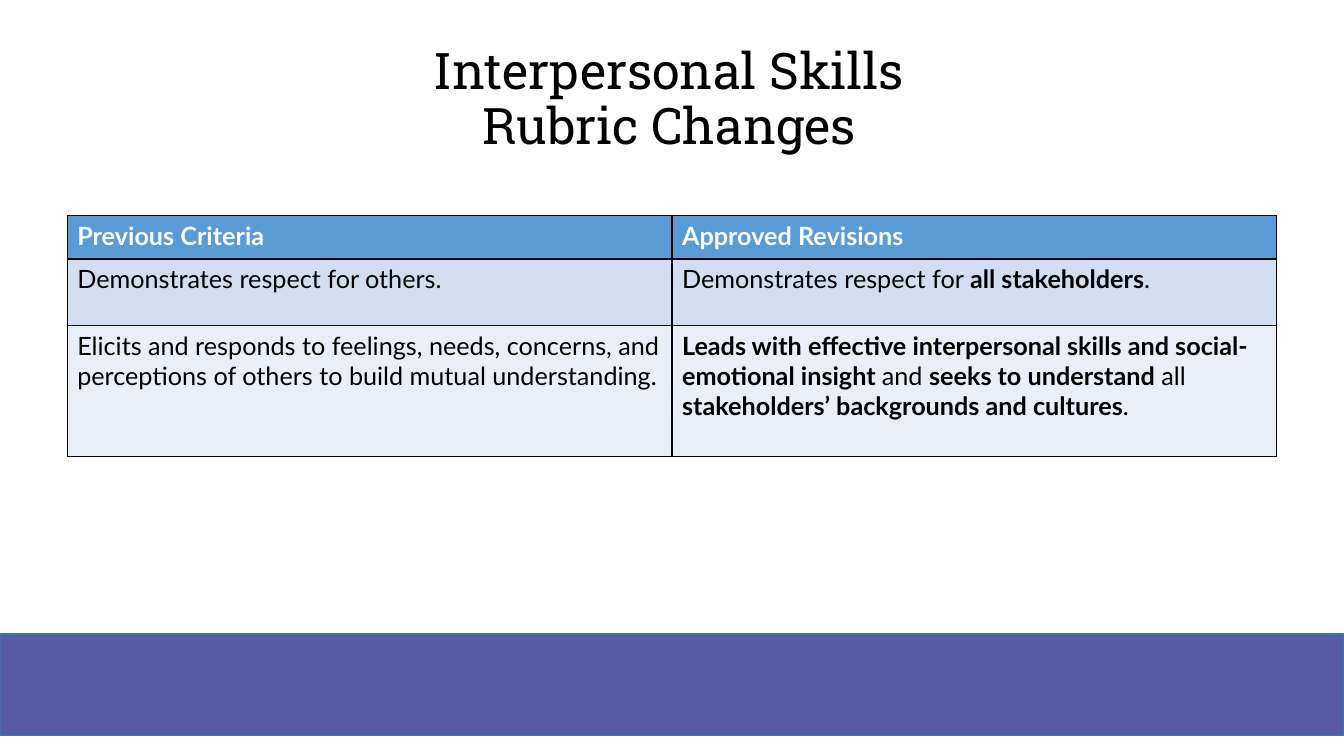
from lxml.etree import SubElement as Sub
from pptx import Presentation as Deck
from pptx.dml.color import RGBColor as Rgb
from pptx.enum.shapes import MSO_SHAPE as Form
from pptx.enum.text import MSO_ANCHOR as Anchor, PP_ALIGN as Align
from pptx.oxml.ns import qn
from pptx.util import Inches, Pt

COLORS = {
    "ink": "000000",
    "white": "FFFFFF",
    "band": "565BA7",
    "edge": "43739E",
    "head": "5B9BD5",
    "mid": "D2DEEF",
    "pale": "EAEFF7",
}
ROWS = [
    ("head", 4.3, ["**Previous Criteria**", "**Approved Revisions**"]),
    ("mid", 6.6, [
        "Demonstrates respect for others.",
        "Demonstrates respect for **all stakeholders**.",
    ]),
    ("pale", 13, [
        "Elicits and responds to feelings, needs, concerns, and perceptions "
        "of others to build mutual understanding.",
        "**Leads with effective interpersonal skills and social-emotional insight **and "
        "**seeks to understand** all **stakeholders’ backgrounds and cultures**.",
    ]),
]


def tint(name):
    return Rgb.from_string(COLORS[name])


def write(frame, text, font="Lato", size=18, color="ink", align=Align.LEFT, space=None):
    frame.word_wrap = True
    para = frame.paragraphs[0]
    para.alignment = align
    para.line_spacing = space
    for part, chunk in enumerate(text.split("**")):
        for row, line in enumerate(chunk.split("\n")):
            if row:
                para.add_line_break()
            if line:
                run = para.add_run()
                run.text = line
                run.font.name = font
                run.font.size = Pt(size)
                run.font.bold = part % 2 == 1
                run.font.color.rgb = tint(color)


class Page:
    cols, rows = 20, 75

    def __init__(self, deck):
        self.wide, self.high = deck.slide_width, deck.slide_height
        self.shapes = deck.slides.add_slide(deck.slide_layouts[6]).shapes

    def across(self, count):
        return round(self.wide * count / self.cols)

    def down(self, count):
        return round(self.high * count / self.rows)

    def place(self, left, top, width, height):
        return self.across(left), self.down(top), self.across(width), self.down(height)

    def band(self, *spot):
        shape = self.shapes.add_shape(Form.RECTANGLE, *self.place(*spot))
        shape.shadow.inherit = False
        shape.fill.solid()
        shape.fill.fore_color.rgb = tint("band")
        shape.line.color.rgb = tint("edge")
        shape.line.width = Pt(1)

    def title(self, text, *spot):
        frame = self.shapes.add_textbox(*self.place(*spot)).text_frame
        frame.vertical_anchor = Anchor.MIDDLE
        write(frame, text, font="Roboto Slab", size=36, align=Align.CENTER, space=0.9)

    def border(self, cell):
        props = cell._tc.get_or_add_tcPr()
        for side in ("a:lnL", "a:lnR", "a:lnT", "a:lnB"):
            line = Sub(props, qn(side), w=str(Pt(1)))
            Sub(Sub(line, qn("a:solidFill")), qn("a:srgbClr"), val=COLORS["ink"])

    def table(self, data, left, top, width):
        height = sum(size for _, size, _ in data)
        count = len(data[0][2])
        spot = self.place(left, top, width, height)
        grid = self.shapes.add_table(len(data), count, *spot).table
        grid.horz_banding = False
        for col in grid.columns:
            col.width = self.across(width / count)
        for row, (fill, size, texts) in enumerate(data):
            grid.rows[row].height = self.down(size)
            for col, text in enumerate(texts):
                cell = grid.cell(row, col)
                self.border(cell)
                cell.fill.solid()
                cell.fill.fore_color.rgb = tint(fill)
                write(cell.text_frame, text, color="ink" if row else "white")


def main():
    deck = Deck()
    deck.slide_width, deck.slide_height = Inches(13.33), Inches(7.5)
    page = Page(deck)
    page.band(0, 62.9, 20, 10.1)
    page.title("Interpersonal Skills\nRubric Changes", 0.96, 4, 18, 12)
    page.table(ROWS, 1, 21.4, 18)
    deck.save("out.pptx")


if __name__ == "__main__":
    main()
